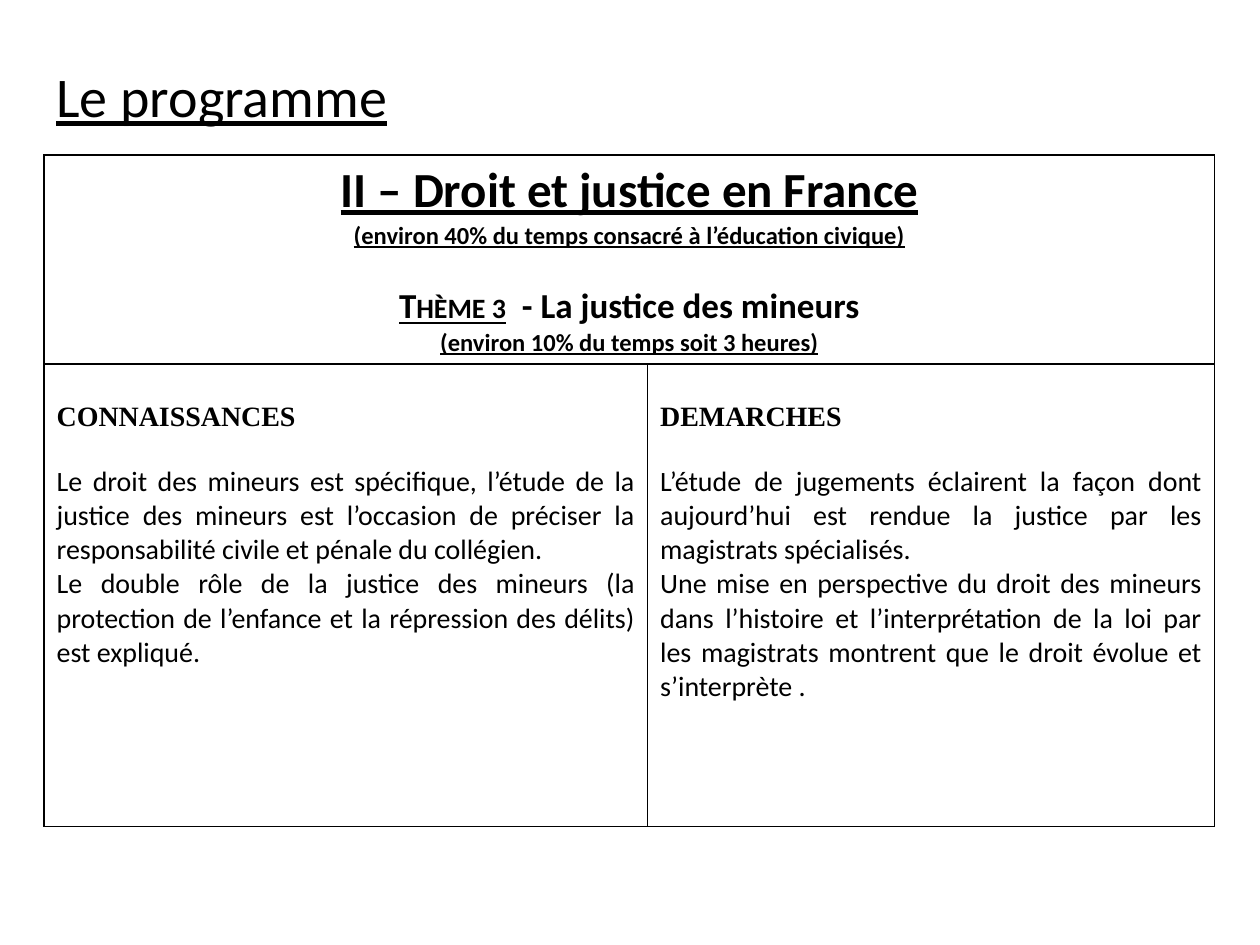
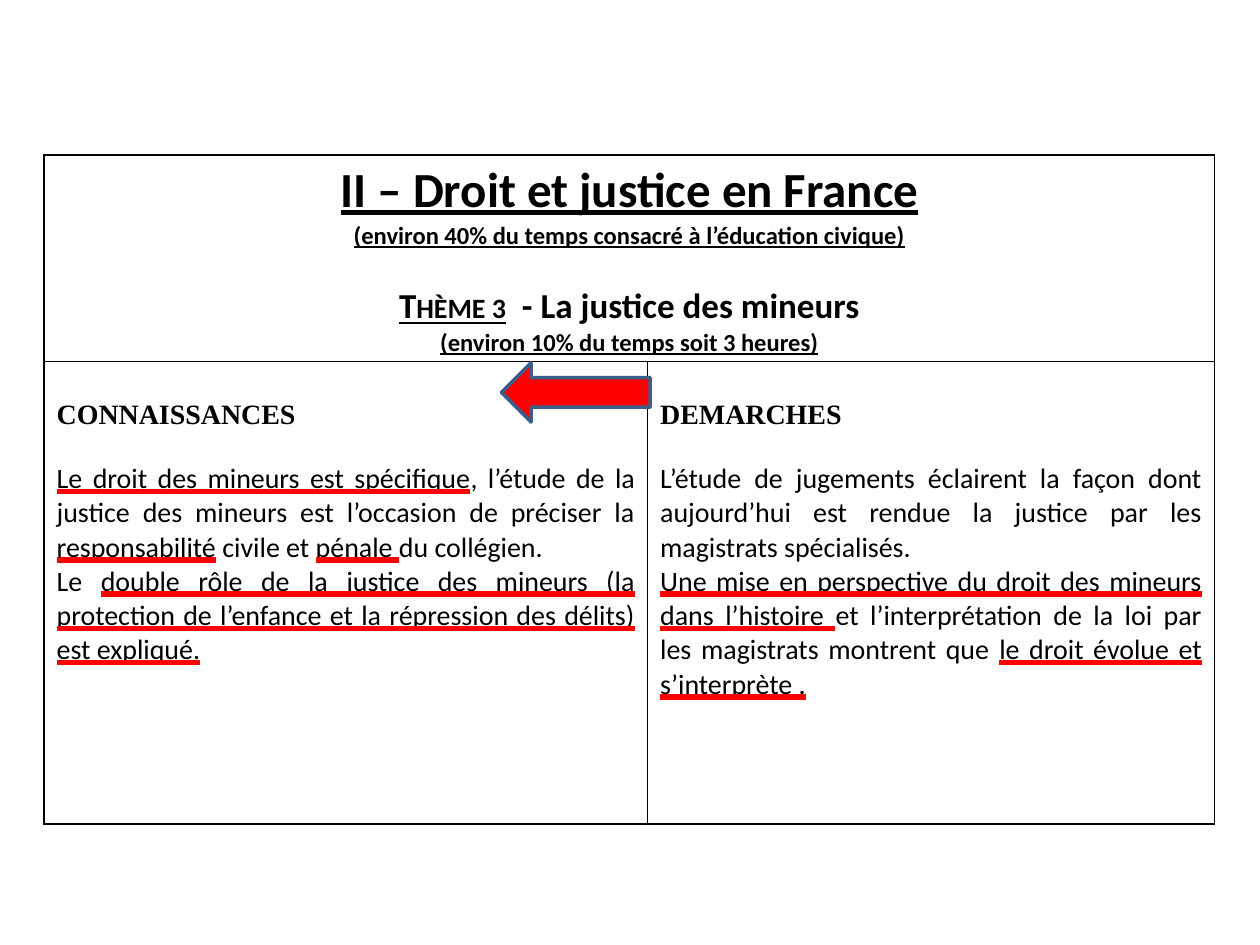
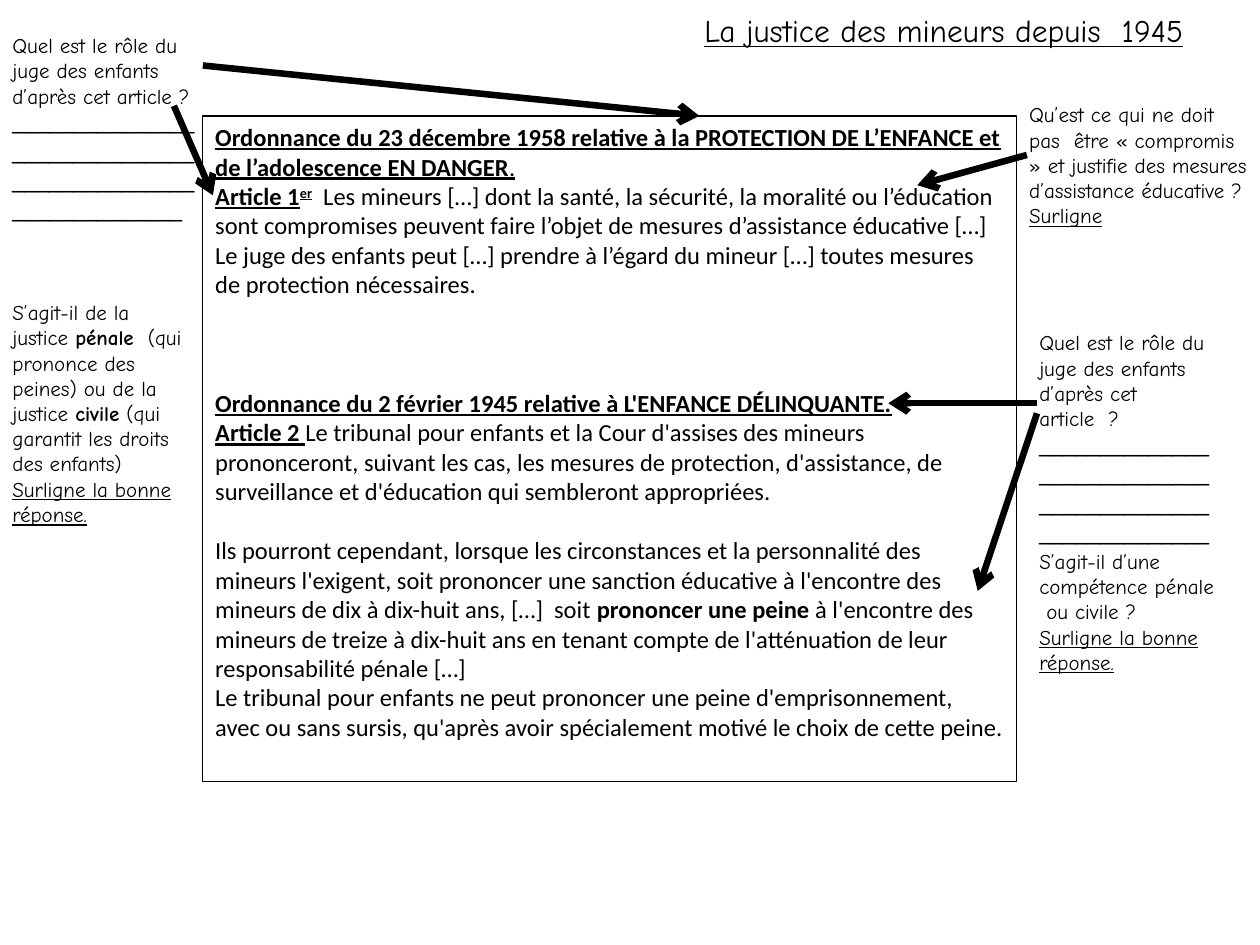
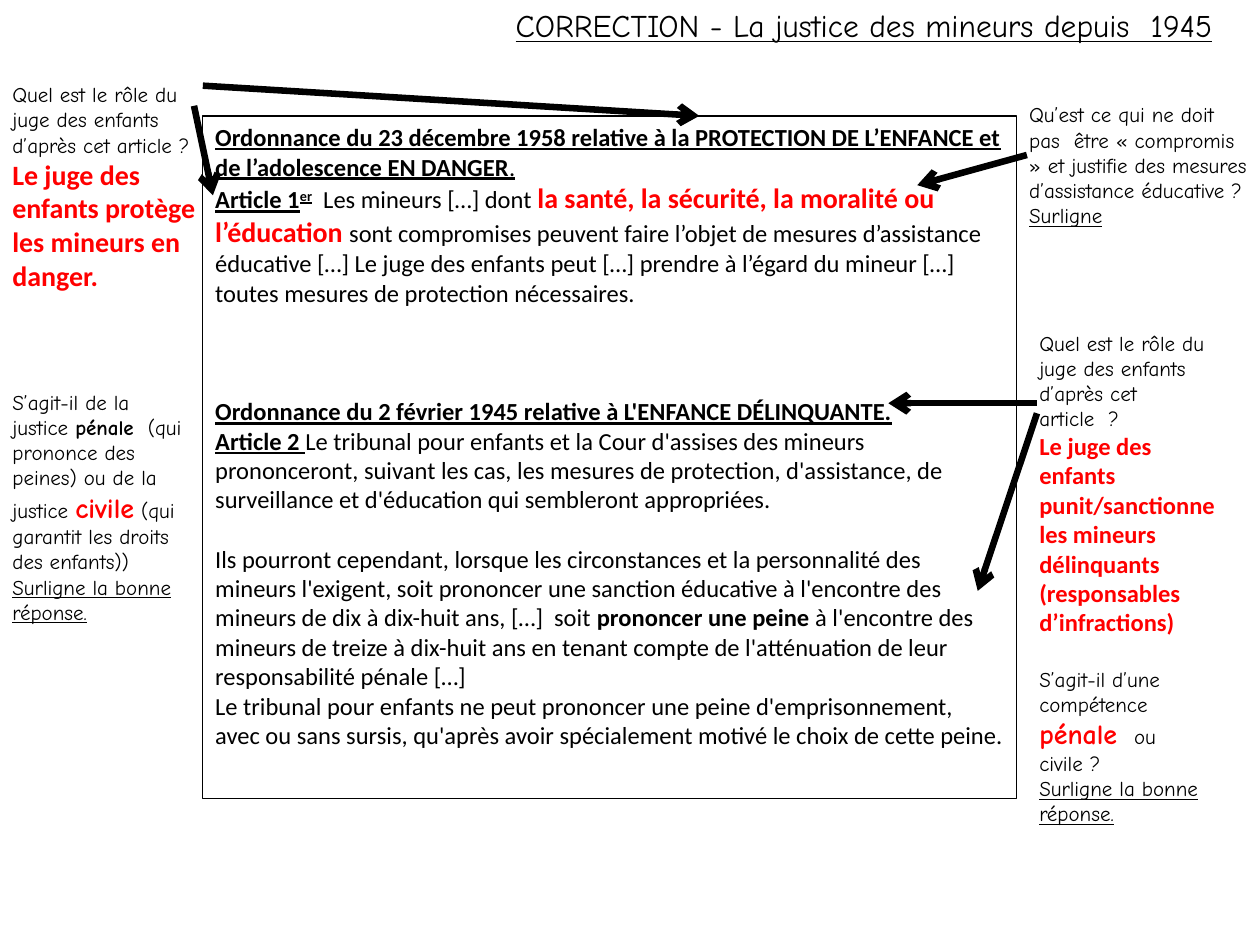
"""Build four slides on the justice of minors: programme, worksheet and correction."""
from lxml import etree
from pptx import Presentation
from pptx import util as u
from pptx.dml.color import RGBColor
from pptx.enum import shapes, text
from pptx.oxml import ns

BLACK, RED, BLUE = "000000", "FF0000", "3A5F8C"
CENTER, JUSTIFY, RIGHT = (text.PP_ALIGN.CENTER, text.PP_ALIGN.JUSTIFY, text.PP_ALIGN.RIGHT)
NOTE = dict(font="Comic Neue", size=12)
HEAD = dict(bold=True, underline=True)
ANSWER = dict(color=RED, bold=True)


def put(frame, words, new=False, size=14, font="Calibri", color=BLACK, bold=False,
        underline=False, line_color=None, align=None, before=0, **attributes):
    """Add a run, in a new paragraph if asked, with its format."""
    para = frame.add_paragraph() if new and frame.text else frame.paragraphs[-1]
    if new:
        para.alignment = align
        para.space_before = u.Pt(before)
    span = para.add_run()
    span.text = words
    span.font.size = u.Pt(size)
    span.font.bold = bold
    span.font.underline = underline
    span.font.color.rgb = RGBColor.from_string(color)
    props = span._r.get_or_add_rPr()
    for name, value in attributes.items():
        props.set(name, value)
    if line_color:
        fill = etree.SubElement(etree.SubElement(props, ns.qn("a:uFill")), ns.qn("a:solidFill"))
        etree.SubElement(fill, ns.qn("a:srgbClr"), val=line_color)
    span.font.name = font


def add_box(page, left, top, width, height):
    """Add a wrapping text box and return its text frame."""
    box = page.shapes.add_textbox(u.Inches(left), u.Inches(top), u.Inches(width), u.Inches(height))
    box.text_frame.word_wrap = True
    return box.text_frame


deck = Presentation()
deck.slide_width, deck.slide_height = u.Inches(10), u.Inches(7.5)
blank = deck.slide_layouts[6]

for marked in (False, True):
    page = deck.slides.add_slide(blank)
    mark = dict(size=16)
    if marked:
        mark.update(underline=text.MSO_UNDERLINE.HEAVY_LINE, line_color=RED)
    table = page.shapes.add_table(2, 2, u.Inches(0.35), u.Inches(1.23),
                                  u.Inches(9.29), u.Inches(5.31)).table
    table.first_row = table.horz_banding = False
    for column, width in zip(table.columns, (4.79, 4.5)):
        column.width = u.Inches(width)
    for row, height in zip(table.rows, (1.64, 3.67)):
        row.height = u.Inches(height)
    for cell in table.iter_cells():
        props = cell._tc.get_or_add_tcPr()
        for side in ("lnL", "lnR", "lnT", "lnB"):
            border = etree.SubElement(props, ns.qn("a:" + side), w=str(u.Pt(1)))
            fill = etree.SubElement(border, ns.qn("a:solidFill"))
            etree.SubElement(fill, ns.qn("a:srgbClr"), val=BLACK)
        cell.fill.background()
    table.cell(0, 0).merge(table.cell(0, 1))

    theme = table.cell(0, 0).text_frame
    put(theme, "II – Droit et justice en France", new=True, size=28, align=CENTER, **HEAD)
    put(theme, "(environ 40% du temps consacré à l’éducation civique)", new=True, align=CENTER, **HEAD)
    put(theme, "Thème 3", new=True, size=20, align=CENTER, before=19.5, cap="small", **HEAD)
    put(theme, "  - La justice des mineurs", size=20, bold=True)
    put(theme, "(environ 10% du temps soit 3 heures)", new=True, align=CENTER, **HEAD)

    columns = (
        ("CONNAISSANCES", (
            (("Le droit des mineurs est spécifique", True),
             (", l’étude de la justice des mineurs est l’occasion de préciser la ", False),
             ("responsabilité", True), (" civile et ", False), ("pénale ", True),
             ("du collégien.", False)),
            (("Le ", False),
             ("double rôle de la justice des mineurs (la protection de l’enfance et la "
              "répression des délits) est expliqué.", True)))),
        ("DEMARCHES ", (
            (("L’étude de jugements éclairent la façon dont aujourd’hui est rendue la justice "
              "par les magistrats spécialisés. ", False),),
            (("Une mise en perspective du droit des mineurs dans l’histoire ", True),
             ("et l’interprétation de la loi par les magistrats montrent que ", False),
             ("le droit évolue et s’interprète .", True)))))
    for index, (heading, paragraphs) in enumerate(columns):
        cell = table.cell(1, index)
        cell.margin_top = u.Inches(0.3)
        put(cell.text_frame, heading, new=True, size=16, font="Times New Roman", bold=True)
        for number, spans in enumerate(paragraphs):
            for position, (words, key) in enumerate(spans):
                put(cell.text_frame, words, new=position == 0, align=JUSTIFY,
                    before=0 if number else 18, **(mark if key else dict(size=16)))

    if marked:
        arrow = page.shapes.add_shape(shapes.MSO_SHAPE.LEFT_ARROW, u.Inches(3.98), u.Inches(2.88),
                                      u.Inches(1.18), u.Inches(0.47))
        arrow.shadow.inherit = False
        arrow.fill.solid()
        arrow.fill.fore_color.rgb = RGBColor.from_string(RED)
        arrow.line.color.rgb = RGBColor.from_string(BLUE)
        arrow.line.width = u.Pt(2)
    else:
        put(add_box(page, 0.35, 0.44, 2.83, 0.64), "Le programme", new=True, size=32, underline=True)

for corrected in (False, True):
    page = deck.slides.add_slide(blank)
    title = add_box(page, *((2.87, 0, 6.85, 0.4) if corrected else (4.92, 0.04, 4.57, 0.4)))
    put(title, ("CORRECTION - " if corrected else "") + "La justice des mineurs depuis  1945",
        new=True, size=18, font="Comic Neue", underline=True, align=RIGHT)

    panel = page.shapes.add_shape(shapes.MSO_SHAPE.RECTANGLE, u.Inches(1.61), u.Inches(0.92),
                                  u.Inches(6.46), u.Inches(5.42 if corrected else 5.28))
    panel.shadow.inherit = False
    panel.fill.background()
    panel.line.color.rgb = RGBColor.from_string(BLACK)
    panel.line.width = u.Pt(0.75)
    law = panel.text_frame
    law.word_wrap = True
    law.vertical_anchor = text.MSO_ANCHOR.TOP
    left = dict(new=True, align=text.PP_ALIGN.LEFT)
    put(law, "Ordonnance du 23 décembre 1958 relative à la PROTECTION DE L’ENFANCE et de "
        "l’adolescence EN DANGER", **left, **HEAD)
    put(law, ".", underline=True)
    put(law, "Article 1", **left, **HEAD)
    put(law, "er", baseline="30000", **HEAD)
    put(law, "  Les mineurs […] dont ")
    put(law, "la santé, la sécurité, la moralité ou l’éducation ",
        **(dict(size=16, **ANSWER) if corrected else {}))
    put(law, "sont compromises peuvent faire l’objet de mesures d’assistance éducative […] Le juge "
        "des enfants peut […] prendre à l’égard du mineur […] toutes mesures de protection "
        "nécessaires.")
    put(law, "Ordonnance du 2 février 1945 relative à L'ENFANCE DÉLINQUANTE.", before=51, **left, **HEAD)
    put(law, "Article 2 ", **left, **HEAD)
    put(law, "Le tribunal pour enfants et la Cour d'assises des mineurs prononceront, suivant les "
        "cas, les mesures de protection, d'assistance, de surveillance et d'éducation qui "
        "sembleront appropriées.")
    put(law, "Ils pourront cependant, lorsque les circonstances et la personnalité des mineurs "
        "l'exigent, soit prononcer une sanction éducative à l'encontre des mineurs de dix à "
        "dix-huit ans, […]  soit ", before=17, **left)
    put(law, "prononcer une peine ", bold=True)
    put(law, "à l'encontre des mineurs de treize à dix-huit ans en tenant compte de l'atténuation "
        "de leur responsabilité pénale […]")
    put(law, "Le tribunal pour enfants ne peut prononcer une peine d'emprisonnement, avec ou sans "
        "sursis, qu'après avoir spécialement motivé le choix de cette peine.", **left)

    protection = add_box(page, 0, 0.6 if corrected else 0.21, 1.73, 2.22 if corrected else 2.32)
    put(protection, "Quel est le rôle du juge des enfants d’après cet article ?", new=True, **NOTE)
    if corrected:
        put(protection, "Le juge des enfants protège les mineurs en danger.", new=True, size=16, **ANSWER)
    else:
        put(protection, "_" * 59, new=True, font="Comic Neue")

    values = add_box(page, 8.07, 0.76, 1.93, 1.72)
    put(values, "Qu’est ce qui ne doit pas  être « compromis » et justifie des mesures "
        "d’assistance éducative ? ", new=True, **NOTE)
    put(values, "Surligne", underline=True, **NOTE)

    key = dict(font="Comic Neue", size=16, **ANSWER)
    punishment = add_box(page, 8.15, 2.57, 1.61, 4.51 if corrected else 3.5)
    put(punishment, "Quel est le rôle du juge des enfants d’après cet article  ?", new=True, **NOTE)
    if corrected:
        put(punishment, "Le juge des enfants punit/sanctionne les mineurs délinquants "
            "(responsables d’infractions)", new=True, **ANSWER)
    else:
        put(punishment, "_" * 56, new=True, font="Comic Neue")
    put(punishment, "S’agit-il d’une compétence ", new=True, before=17 if corrected else 0, **NOTE)
    put(punishment, "pénale ", **(key if corrected else NOTE))
    put(punishment, " ou civile ?", **NOTE)

    justice = add_box(page, 0, 3.04 if corrected else 2.33, 1.61, 2.39 if corrected else 2.32)
    put(justice, "S’agit-il de la justice ", new=True, **NOTE)
    put(justice, "pénale", bold=True, **NOTE)
    put(justice, "  (qui prononce des peines) ou de la justice ", **NOTE)
    put(justice, "civile", **(key if corrected else dict(bold=True, **NOTE)))
    put(justice, " (qui garantit les droits des enfants)" + (")" if corrected else ""), **NOTE)
    for frame in (punishment, justice):
        put(frame, "Surligne la bonne réponse.", new=True, underline=True, **NOTE)

    for ends in ((1.54 if corrected else 1.38, 0.84, 1.69, 1.55),
                 (1.61, 0.68 if corrected else 0.52, 5.55, 0.92),
                 (8.15, 1.23, 7.28, 1.47), (8.23, 3.2, 7.05, 3.2), (8.23, 3.28, 7.76, 4.69)):
        arrow = page.shapes.add_connector(shapes.MSO_CONNECTOR.STRAIGHT, *map(u.Inches, ends))
        arrow.line.color.rgb = RGBColor.from_string(BLACK)
        arrow.line.width = u.Pt(3.75)
        etree.SubElement(arrow.line._get_or_add_ln(), ns.qn("a:tailEnd"), type="arrow")
        etree.SubElement(arrow._element.spPr, ns.qn("a:effectLst"))

deck.save("out.pptx")
